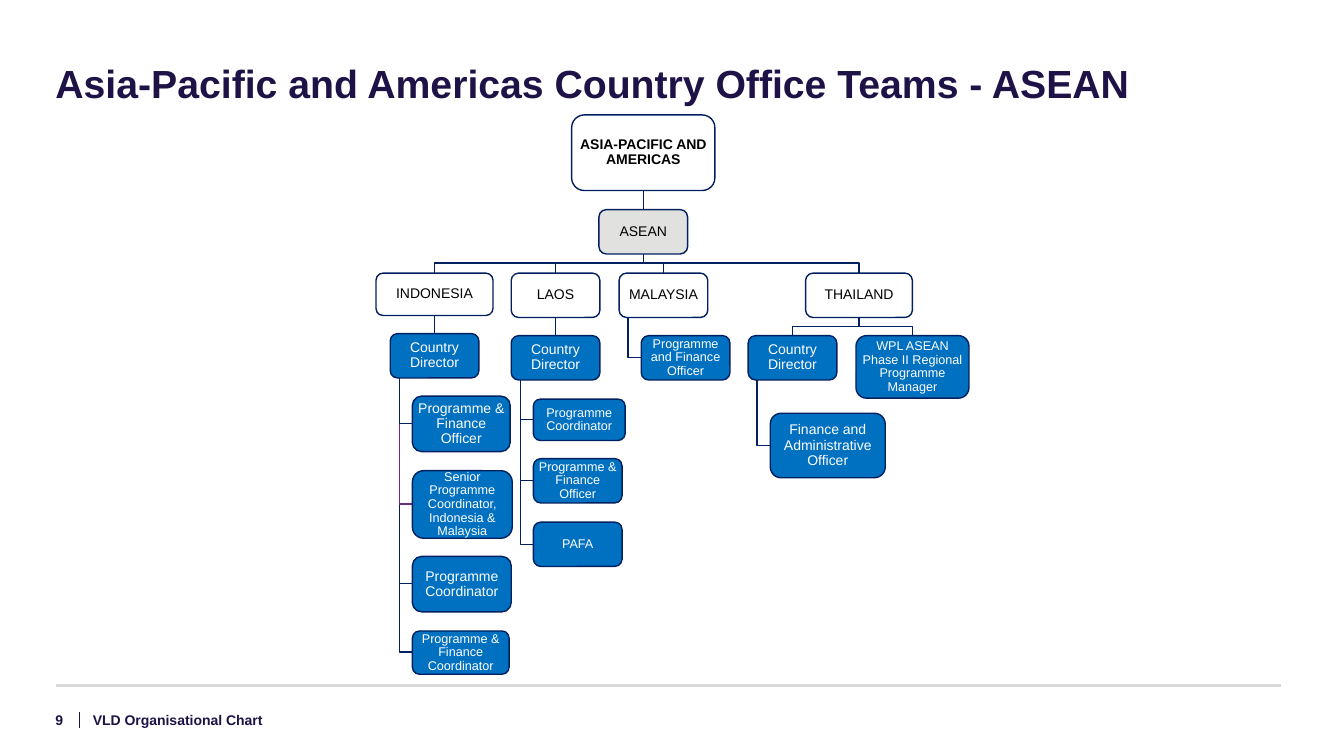
"""Build the ASEAN country office organisation chart slide."""
from dataclasses import dataclass, field

from lxml.etree import SubElement
from pptx import Presentation
from pptx.dml.color import RGBColor
from pptx.enum.shapes import MSO_CONNECTOR, MSO_SHAPE
from pptx.enum.text import MSO_ANCHOR, MSO_AUTO_SIZE, PP_ALIGN
from pptx.oxml.ns import qn
from pptx.util import Pt

PX = 9144
GAP = 9
HEX = {
    "ink": "1E1246", "rule": "D9D9D9", "navy": "002060", "plum": "6C2D7D",
    "blue": "0070C0", "grey": "E1E2E0", "white": "FFFFFF", "black": "000000",
}


@dataclass
class Node:
    text: str
    box: tuple
    size: int = 10
    fill: str = "blue"
    bold: bool = False
    hang: bool = False
    line: str = "navy"
    kids: list = field(default_factory=list)


def unit(text, box, **kw):
    return Node(text, box, fill="white", **kw)


def staff(text, box, size=10, **kw):
    return Node(text, box, size, hang=True, **kw)


INDONESIA = unit("INDONESIA", (373, 271, 116, 42), kids=[
    Node("Country Director", (387, 331, 88, 44), kids=[
        staff("Programme & Finance Officer", (409, 393, 97, 55)),
        staff("Senior Programme Coordinator, Indonesia & Malaysia",
              (409, 467, 99, 67), 9, line="plum"),
        staff("Programme Coordinator", (409, 552, 98, 55)),
        staff("Programme & Finance Coordinator", (409, 626, 96, 43), 9),
    ]),
])
LAOS = unit("LAOS", (507, 271, 88, 44), kids=[
    Node("Country Director", (507, 333, 88, 44), kids=[
        staff("Programme Coordinator", (529, 396, 91, 41), 9),
        staff("Programme & Finance Officer", (529, 455, 88, 44), 9),
        staff("PAFA", (529, 518, 88, 44), 9),
    ]),
])
MALAYSIA = unit("MALAYSIA", (614, 271, 88, 44), kids=[
    staff("Programme and Finance Officer", (636, 333, 88, 44), 9),
])
THAILAND = unit("THAILAND", (799, 271, 106, 44), kids=[
    Node("Country Director", (742, 333, 88, 44), kids=[
        staff("Finance and Administrative Officer", (764, 410, 114, 64)),
    ]),
    Node("WPL ASEAN Phase II Regional Programme Manager",
         (849, 333, 112, 62), 9),
])
ASEAN = Node("ASEAN", (594, 208, 88, 44), fill="grey",
             kids=[INDONESIA, LAOS, MALAYSIA, THAILAND])
ROOT = unit("ASIA-PACIFIC AND AMERICAS", (567, 114, 142, 75), bold=True,
            kids=[ASEAN])


def rgb(name):
    return RGBColor.from_string(HEX[name])


def emu(*nums):
    return [num * PX for num in nums]


def write(frame, text, size=10, color="ink", bold=False, inset=0,
          align=PP_ALIGN.LEFT, anchor=MSO_ANCHOR.MIDDLE, lead=1.0):
    frame.auto_size = MSO_AUTO_SIZE.NONE
    frame.word_wrap = True
    frame.vertical_anchor = anchor
    frame.margin_left = frame.margin_right = inset * PX
    frame.margin_top = frame.margin_bottom = inset * PX
    para = frame.paragraphs[0]
    para.alignment = align
    para.line_spacing = lead
    run = para.add_run()
    run.text = text
    run.font.name = "Arial"
    run.font.size = Pt(size)
    run.font.bold = bold
    run.font.color.rgb = rgb(color)


def label(slide, text, box):
    shape = slide.shapes.add_textbox(*emu(*box))
    write(shape.text_frame, text, bold=True)


def rule(slide, start, end, color, width):
    line = slide.shapes.add_connector(MSO_CONNECTOR.STRAIGHT,
                                      *emu(*start, *end))
    line.line.color.rgb = rgb(color)
    line.line.width = Pt(width)
    SubElement(line._element.spPr, qn("a:effectLst"))


def elbow(slide, points, color):
    pen = slide.shapes.build_freeform(*points[0], scale=PX)
    pen.add_line_segments(points[1:], close=False)
    shape = pen.convert_to_shape()
    shape.shadow.inherit = False
    shape.fill.background()
    shape.line.color.rgb = rgb(color)
    shape.line.width = Pt(1)


def link(slide, node, kid):
    left, top, width, height = node.box
    x, y, wide, high = kid.box
    base = top + height
    mid, goal = left + width // 2, x + wide // 2
    if kid.hang:
        stem, level = left + GAP, y + high // 2
        elbow(slide, [(stem, base), (stem, level), (x, level)], kid.line)
    elif mid == goal:
        rule(slide, (mid, base), (goal, y), kid.line, 1)
    else:
        bus = base + GAP
        elbow(slide, [(mid, base), (mid, bus), (goal, bus), (goal, y)],
              kid.line)


def links(slide, node):
    for kid in reversed(node.kids):
        links(slide, kid)
        link(slide, node, kid)


def boxes(slide, node):
    shape = slide.shapes.add_shape(MSO_SHAPE.ROUNDED_RECTANGLE,
                                   *emu(*node.box))
    shape.shadow.inherit = False
    shape.fill.solid()
    shape.fill.fore_color.rgb = rgb(node.fill)
    shape.line.color.rgb = rgb("navy")
    shape.line.width = Pt(1)
    color = "white" if node.fill == "blue" else "black"
    write(shape.text_frame, node.text, size=node.size, color=color,
          bold=node.bold, inset=1, align=PP_ALIGN.CENTER, lead=0.9)
    for kid in node.kids:
        boxes(slide, kid)


def head(slide, text):
    title = slide.shapes.title
    title.left, title.top, title.width, title.height = emu(55, 64, 1215, 100)
    write(title.text_frame, text, size=28, bold=True,
          anchor=MSO_ANCHOR.TOP, lead=0.9)


def main():
    deck = Presentation()
    deck.slide_width, deck.slide_height = emu(1333, 750)
    slide = deck.slides.add_slide(deck.slide_layouts[5])
    rule(slide, (79, 706), (79, 722), "ink", 0.75)
    rule(slide, (56, 680), (1271, 680), "rule", 2)
    head(slide, "Asia-Pacific and Americas Country Office Teams - ASEAN")
    label(slide, "VLD Organisational Chart", (92, 702, 508, 24))
    label(slide, "9", (55, 702, 37, 24))
    links(slide, ROOT)
    boxes(slide, ROOT)
    deck.save("out.pptx")


if __name__ == "__main__":
    main()
